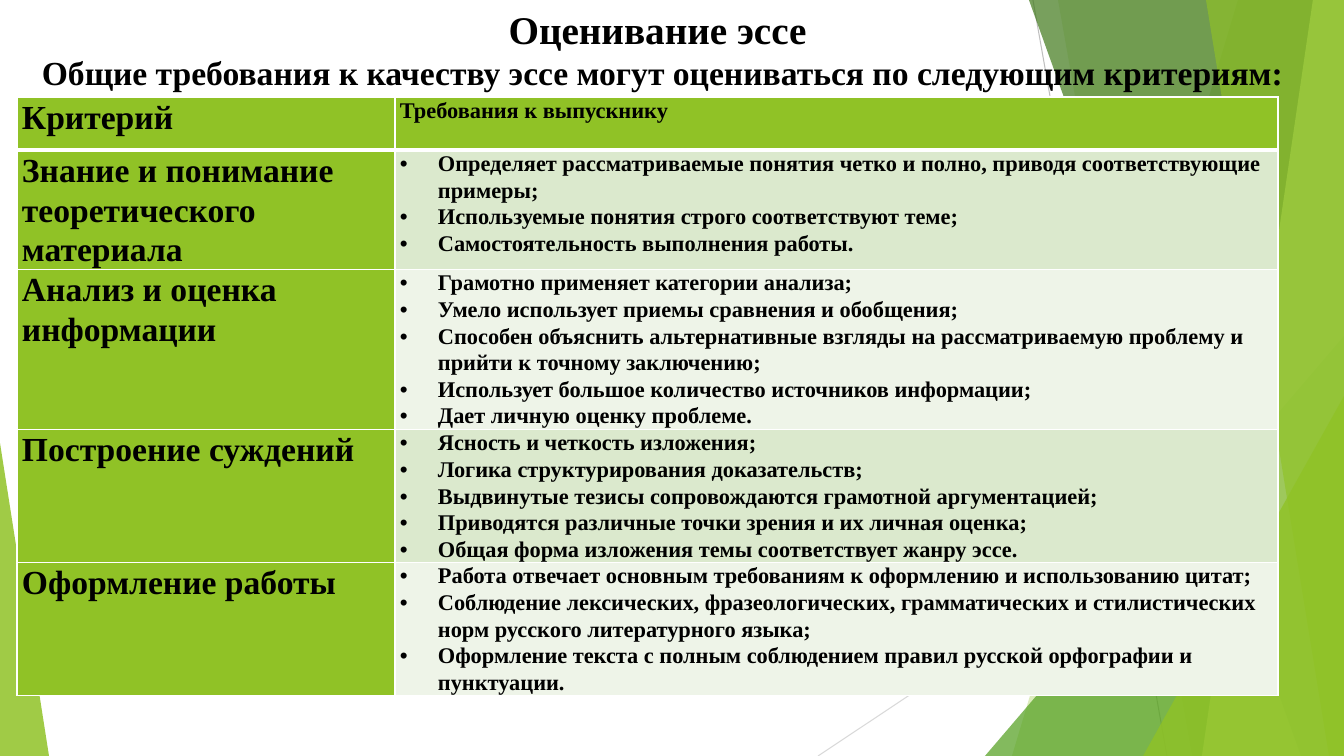
from lxml import etree
from pptx import Presentation
from pptx import util as u
from pptx.dml.color import RGBColor
from pptx.enum import shapes, text
from pptx.oxml.ns import qn

PX = 914400 / 100.8
WIDTH, HEIGHT = 1344, 756
FONT = "Times New Roman"
COLORS = {
    "text": "000000", "white": "FFFFFF", "lime": "90C226", "green": "54A021",
    "forest": "3F7819", "pale": "C0E474", "ray": "BFBFBF", "light_ray": "D9D9D9",
    "band_dark": "DBE9CD", "band_light": "EEF4E8",
}
HEADER = ("Критерий", "Требования к выпускнику")
CRITERIA = [
    ("Знание и понимание теоретического материала", [
        "Определяет рассматриваемые понятия четко и полно, приводя соответствующие примеры;",
        "Используемые понятия строго соответствуют теме;",
        "Самостоятельность выполнения работы."]),
    ("Анализ и оценка информации", [
        "Грамотно применяет категории анализа;",
        "Умело использует приемы сравнения и обобщения;",
        "Способен объяснить альтернативные взгляды на рассматриваемую проблему и "
        "прийти к точному заключению;",
        "Использует большое количество источников информации;",
        "Дает личную оценку проблеме."]),
    ("Построение суждений", [
        "Ясность и четкость изложения;",
        "Логика структурирования доказательств;",
        "Выдвинутые тезисы сопровождаются грамотной аргументацией;",
        "Приводятся различные точки зрения и их личная оценка;",
        "Общая форма изложения темы соответствует жанру эссе."]),
    ("Оформление работы", [
        "Работа отвечает основным требованиям к оформлению и использованию цитат;",
        "Соблюдение лексических, фразеологических, грамматических и стилистических "
        "норм русского литературного языка;",
        "Оформление текста с полным соблюдением правил русской орфографии и пунктуации."]),
]
ROW_HEIGHTS = [53, 119, 160, 133, 133]
COLUMN_WIDTHS = [378, 883]


def px(length):
    return u.Emu(round(length * PX))


def rgb(name):
    return RGBColor.from_string(COLORS[name])


def style(font, size):
    font.name, font.size, font.bold = FONT, u.Pt(size), True
    font.color.rgb = rgb("text")


def paint(facet, color, opacity):
    facet.shadow.inherit = False
    facet.line.fill.background()
    facet.fill.solid()
    facet.fill.fore_color.rgb = rgb(color)
    tint = facet.fill._xPr.find(".//" + qn("a:srgbClr"))
    etree.SubElement(tint, qn("a:alpha")).set("val", str(opacity * 1000))


def add_ray(slide, start, end, color):
    ray = slide.shapes.add_connector(
        shapes.MSO_CONNECTOR.STRAIGHT, *map(px, start + end))
    ray.line.color.rgb = rgb(color)
    ray.line.width = u.Pt(0.75)
    etree.SubElement(ray._element.spPr, qn("a:effectLst"))


def add_strip(slide, box, top_x, bottom_x, color, opacity):
    """Area between a slanted edge and the right side of the box."""
    left, top, width, height = box
    right, bottom = left + width, top + height
    outline = slide.shapes.build_freeform(left + top_x, top, scale=PX)
    outline.add_line_segments(
        [(right, top), (right, bottom), (left + bottom_x, bottom)], close=True)
    paint(outline.convert_to_shape(), color, opacity)


def add_corner(slide, box, apex, color, opacity):
    corner = slide.shapes.add_shape(
        shapes.MSO_SHAPE.ISOSCELES_TRIANGLE, *map(px, box))
    corner.adjustments[0] = apex
    paint(corner, color, opacity)


def add_backdrop(slide, box):
    left, top, width, height = box
    right, bottom = left + width, top + height
    add_ray(slide, (left + 1033, top), (left + 1167, bottom), "ray")
    add_ray(slide, (right, top + 406), (left + 818, bottom), "light_ray")
    add_strip(slide, box, 1238, 1012, "lime", 30)
    add_strip(slide, box, 1058, 1192, "lime", 20)
    add_corner(slide, (right - 359, bottom - 420, 359, 420), 1, "green", 72)
    add_strip(slide, box, 1029, 1301, "forest", 70)
    add_strip(slide, box, 1313, 1202, "pale", 70)
    add_strip(slide, box, 1206, 1329, "lime", 65)
    add_corner(slide, (right - 201, bottom - 360, 201, 360), 1, "lime", 80)
    add_corner(slide, (left, bottom - 313, 49, 313), 0, "lime", 85)


def add_heading(slide, box):
    heading = slide.shapes.title
    heading.left, heading.top, heading.width, heading.height = map(px, box)
    slide.shapes._spTree.append(heading._element)  # in front of the backdrop
    frame = heading.text_frame
    frame.word_wrap = True
    frame.auto_size = text.MSO_AUTO_SIZE.NONE
    frame.vertical_anchor = text.MSO_ANCHOR.TOP
    lines = frame.paragraphs[0]
    lines.alignment = text.PP_ALIGN.CENTER
    topic = lines.add_run()
    topic.text = "Оценивание эссе "
    style(topic.font, 28)
    lines.add_line_break()
    subtitle = lines.add_run()
    subtitle.text = ("Общие требования к качеству эссе могут оцениваться "
                     "по следующим критериям:")
    style(subtitle.font, 24)


def add_bullet(paragraph):
    props = paragraph._p.get_or_add_pPr()
    props.set("marL", str(px(38)))
    props.set("indent", str(-px(38)))
    etree.SubElement(props, qn("a:buFont")).set("typeface", "Arial")
    etree.SubElement(props, qn("a:buChar")).set("char", "•")


def set_borders(cell, bottom_width):
    props = cell._tc.get_or_add_tcPr()
    for side, width in (("L", 1), ("R", 1), ("T", 1), ("B", bottom_width)):
        border = etree.SubElement(props, qn("a:ln" + side), w=str(u.Pt(width)))
        fill = etree.SubElement(border, qn("a:solidFill"))
        etree.SubElement(fill, qn("a:srgbClr")).set("val", COLORS["white"])


def fill_cell(cell, lines, size, color, bulleted=False, bottom_width=1):
    cell.margin_left = cell.margin_right = px(5)
    cell.margin_top = cell.margin_bottom = 0
    set_borders(cell, bottom_width)
    cell.fill.solid()
    cell.fill.fore_color.rgb = rgb(color)
    frame = cell.text_frame
    for i, line in enumerate(lines):
        paragraph = frame.add_paragraph() if i else frame.paragraphs[0]
        paragraph.text = line
        if bulleted:
            add_bullet(paragraph)
        paragraph.line_spacing = 1.07
        style(paragraph.font, size)


def add_criteria_table(slide, box):
    table = slide.shapes.add_table(
        len(ROW_HEIGHTS), len(COLUMN_WIDTHS), *map(px, box)).table
    for column, width in zip(table.columns, COLUMN_WIDTHS):
        column.width = px(width)
    for row, height in zip(table.rows, ROW_HEIGHTS):
        row.height = px(height)
    for column, (label, size) in enumerate(zip(HEADER, (24, 16))):
        fill_cell(table.cell(0, column), [label], size, "lime", bottom_width=3)
    for row, (criterion, demands) in enumerate(CRITERIA, start=1):
        band = "band_dark" if row % 2 else "band_light"
        fill_cell(table.cell(row, 0), [criterion], 24, "lime")
        fill_cell(table.cell(row, 1), demands, 16, band, bulleted=True)


def main():
    deck = Presentation()
    deck.slide_width, deck.slide_height = px(WIDTH), px(HEIGHT)
    slide = deck.slides.add_slide(deck.slide_layouts[5])
    add_backdrop(slide, (0, 0, WIDTH, HEIGHT))
    add_heading(slide, (17, 0, 1291, 145))
    add_criteria_table(
        slide, (17, 97, sum(COLUMN_WIDTHS), sum(ROW_HEIGHTS)))
    deck.save("out.pptx")


if __name__ == "__main__":
    main()
